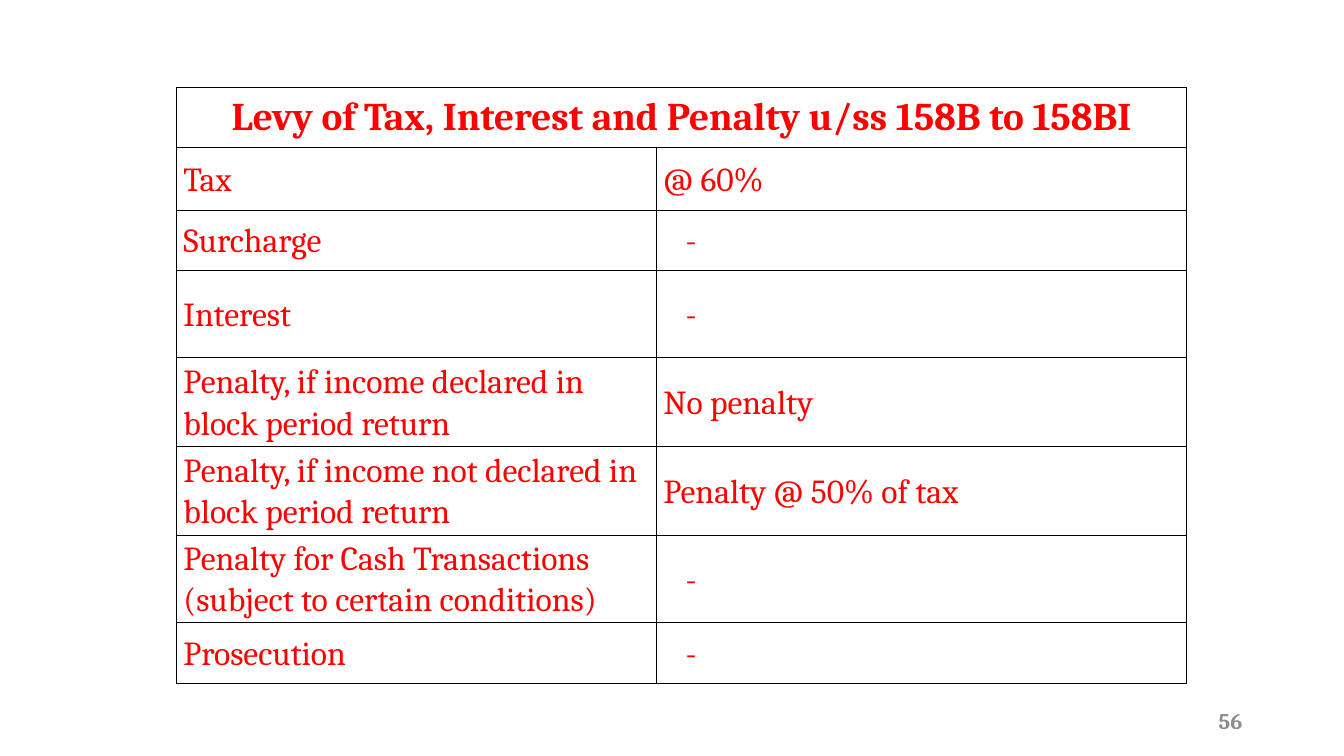
from lxml import etree
from pptx import Presentation
from pptx.dml.color import RGBColor
from pptx.enum.text import MSO_ANCHOR as Anchor, PP_ALIGN as Align
from pptx.oxml.ns import qn
from pptx.util import Inches, Pt

# Content
TITLE = "Levy of Tax, Interest and Penalty u/ss 158B to 158BI"
LEVIES = [
    ("Tax", "@ 60%"),
    ("Surcharge", "-"),
    ("Interest", "-"),
    ("Penalty, if income declared in block period return", "No penalty"),
    ("Penalty, if income not declared in block period return", "Penalty @ 50% of tax"),
    ("Penalty for Cash Transactions\n(subject to certain conditions)", "-"),
    ("Prosecution", "-"),
]
PAGE_NUMBER = "56"

# Layout and style
LEFT, TOP = 1.75, 0.87
COL_WIDTHS = [4.76, 5.26]
ROW_HEIGHTS = [0.59, 0.63, 0.59, 0.87, 0.88, 0.88, 0.87, 0.6]
CELL_MARGIN, DASH_MARGIN = 0.07, 0.29
FONT = "Cambria"
RED, GREY, BLACK, WHITE = "FF0000", "8C8C8C", "000000", "FFFFFF"


def color(hex_code):
    return RGBColor.from_string(hex_code)


def write(tf, text, size, hex_code, bold=False, align=Align.LEFT):
    p = tf.paragraphs[0]
    p.text = text
    p.alignment = align
    for r in p.runs:
        r.font.name = FONT
        r.font.size = Pt(size)
        r.font.bold = bold
        r.font.color.rgb = color(hex_code)
    return p


def add_borders(cell):
    tc_pr = cell._tc.get_or_add_tcPr()
    for side in ("lnL", "lnR", "lnT", "lnB"):
        ln = etree.SubElement(tc_pr, qn(f"a:{side}"), w=str(Pt(1)))
        fill = etree.SubElement(ln, qn("a:solidFill"))
        etree.SubElement(fill, qn("a:srgbClr"), val=BLACK)


prs = Presentation()
prs.slide_width, prs.slide_height = Inches(13.33), Inches(7.5)
s = prs.slides.add_slide(prs.slide_layouts[6])

# Table grid
table = s.shapes.add_table(
    len(ROW_HEIGHTS), len(COL_WIDTHS), Inches(LEFT), Inches(TOP),
    Inches(sum(COL_WIDTHS)), Inches(sum(ROW_HEIGHTS))).table
table.first_row = table.horz_banding = False
for column, width in zip(table.columns, COL_WIDTHS):
    column.width = Inches(width)
for row, height in zip(table.rows, ROW_HEIGHTS):
    row.height = Inches(height)
for cell in table.iter_cells():
    add_borders(cell)
    cell.fill.solid()
    cell.fill.fore_color.rgb = color(WHITE)
    cell.vertical_anchor = Anchor.MIDDLE

# Heading row
heading = table.cell(0, 0)
heading.merge(table.cell(0, 1))
write(heading.text_frame, TITLE, 28, RED, True, Align.CENTER)

# Levy rows, with a lone dash set further in
for i, levy in enumerate(LEVIES, start=1):
    for j, text in enumerate(levy):
        cell = table.cell(i, j)
        cell.margin_left = Inches(DASH_MARGIN if text == "-" else CELL_MARGIN)
        cell.margin_right = Inches(CELL_MARGIN)
        cell.margin_top = cell.margin_bottom = 0
        write(cell.text_frame, text, 24, RED).line_spacing = 1.07

# Page number
tf = s.shapes.add_textbox(Inches(9.42), Inches(6.95), Inches(3), Inches(0.4)).text_frame
tf.word_wrap = True
tf.vertical_anchor = Anchor.MIDDLE
write(tf, PAGE_NUMBER, 16, GREY, True, Align.RIGHT)

prs.save("out.pptx")
